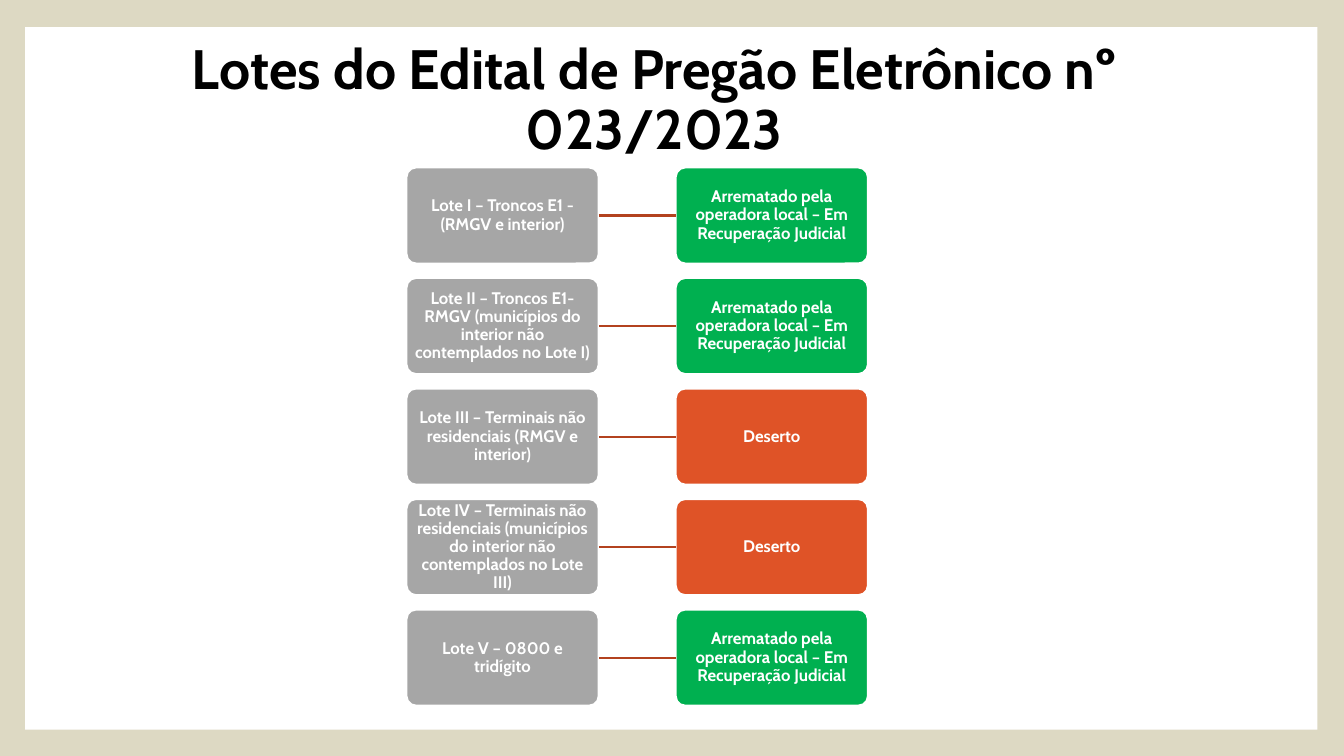
"""Build the slide listing the lots of the electronic auction and their results."""
from lxml.etree import SubElement
from pptx import Presentation
from pptx.dml.color import RGBColor
from pptx.enum.shapes import MSO_CONNECTOR, MSO_SHAPE
from pptx.enum.text import MSO_ANCHOR, MSO_AUTO_SIZE, PP_ALIGN
from pptx.oxml.ns import qn
from pptx.util import Pt

SAND = RGBColor(0xDD, 0xD9, 0xC3)
WHITE = RGBColor(0xFF, 0xFF, 0xFF)
BLACK = RGBColor(0, 0, 0)
GRAY = RGBColor(0xA6, 0xA6, 0xA6)
GREEN = RGBColor(0x00, 0xB0, 0x50)
ORANGE = RGBColor(0xDF, 0x53, 0x27)
RUST = RGBColor(0xB3, 0x42, 0x1F)

HEADING = "Lotes do Edital de Pregão Eletrônico nº 023/2023"
AWARDED = ("Arrematado pela operadora local – Em Recuperação Judicial", GREEN)
DESERTED = ("Deserto", ORANGE)
LOTS = [
    ("Lote I – Troncos E1 - (RMGV e interior)", AWARDED),
    ("Lote II – Troncos E1- RMGV (municípios do interior não contemplados no Lote I)", AWARDED),
    ("Lote III – Terminais não residenciais (RMGV e interior)", DESERTED),
    ("Lote IV – Terminais não residenciais (municípios do interior não contemplados no Lote III)", DESERTED),
    ("Lote V – 0800 e tridígito", AWARDED),
]

LOT_LEFT, RESULT_LEFT, FIRST_TOP = 290.3, 482.6, 119.6
BOX_WIDTH, BOX_HEIGHT, ROW_STEP = 137.4, 68.7, 78.95


def write(shape, text, *, size, color, inset):
    """Put bold centred text in a shape."""
    frame = shape.text_frame
    frame.word_wrap = True
    frame.auto_size = MSO_AUTO_SIZE.NONE
    frame.vertical_anchor = MSO_ANCHOR.MIDDLE
    frame.margin_left = frame.margin_right = Pt(inset)
    frame.margin_top = frame.margin_bottom = Pt(inset / 2)
    paragraph = frame.paragraphs[0]
    paragraph.alignment = PP_ALIGN.CENTER
    paragraph.line_spacing = 0.9
    run = paragraph.add_run()
    run.text = text
    run.font.name = "Cabin"
    run.font.size = Pt(size)
    run.font.bold = True
    run.font.color.rgb = color


def add_box(slide, text, left, top, fill):
    """Add one rounded box with its text."""
    box = slide.shapes.add_shape(
        MSO_SHAPE.ROUNDED_RECTANGLE, Pt(left), Pt(top), Pt(BOX_WIDTH), Pt(BOX_HEIGHT))
    box.adjustments[0] = 0.1
    box.shadow.inherit = False
    box.fill.solid()
    box.fill.fore_color.rgb = fill
    box.line.color.rgb = WHITE
    box.line.width = Pt(1.5)
    write(box, text, size=12, color=WHITE, inset=2.8)
    return box


def join(slide, lot, result):
    """Link a lot to its result."""
    middle = lot.top + lot.height // 2
    link = slide.shapes.add_connector(
        MSO_CONNECTOR.STRAIGHT, lot.left + lot.width, middle, result.left, middle)
    link.begin_connect(lot, 3)
    link.end_connect(result, 1)
    link.line.color.rgb = RUST
    link.line.width = Pt(1.5)
    SubElement(link.element.spPr, qn("a:effectLst"))


def main():
    """Build and save the slide."""
    deck = Presentation()
    deck.slide_width, deck.slide_height = Pt(960), Pt(540)
    slide = deck.slides.add_slide(deck.slide_layouts[5])
    slide.background.fill.solid()
    slide.background.fill.fore_color.rgb = SAND

    heading = slide.shapes.title
    heading.left, heading.top, heading.width, heading.height = Pt(53.3), Pt(36), Pt(828), Pt(73.4)
    write(heading, HEADING, size=39.6, color=BLACK, inset=7.2)

    panel = slide.shapes.add_shape(MSO_SHAPE.RECTANGLE, Pt(18), Pt(19.4), Pt(923), Pt(501.8))
    panel.shadow.inherit = False
    panel.fill.solid()
    panel.fill.fore_color.rgb = WHITE
    panel.line.fill.background()
    heading.element.addprevious(panel.element)

    for row, (lot_text, (result_text, result_fill)) in enumerate(LOTS):
        top = FIRST_TOP + row * ROW_STEP
        lot = add_box(slide, lot_text, LOT_LEFT, top, GRAY)
        result = add_box(slide, result_text, RESULT_LEFT, top, result_fill)
        join(slide, lot, result)

    deck.save("out.pptx")


if __name__ == "__main__":
    main()
